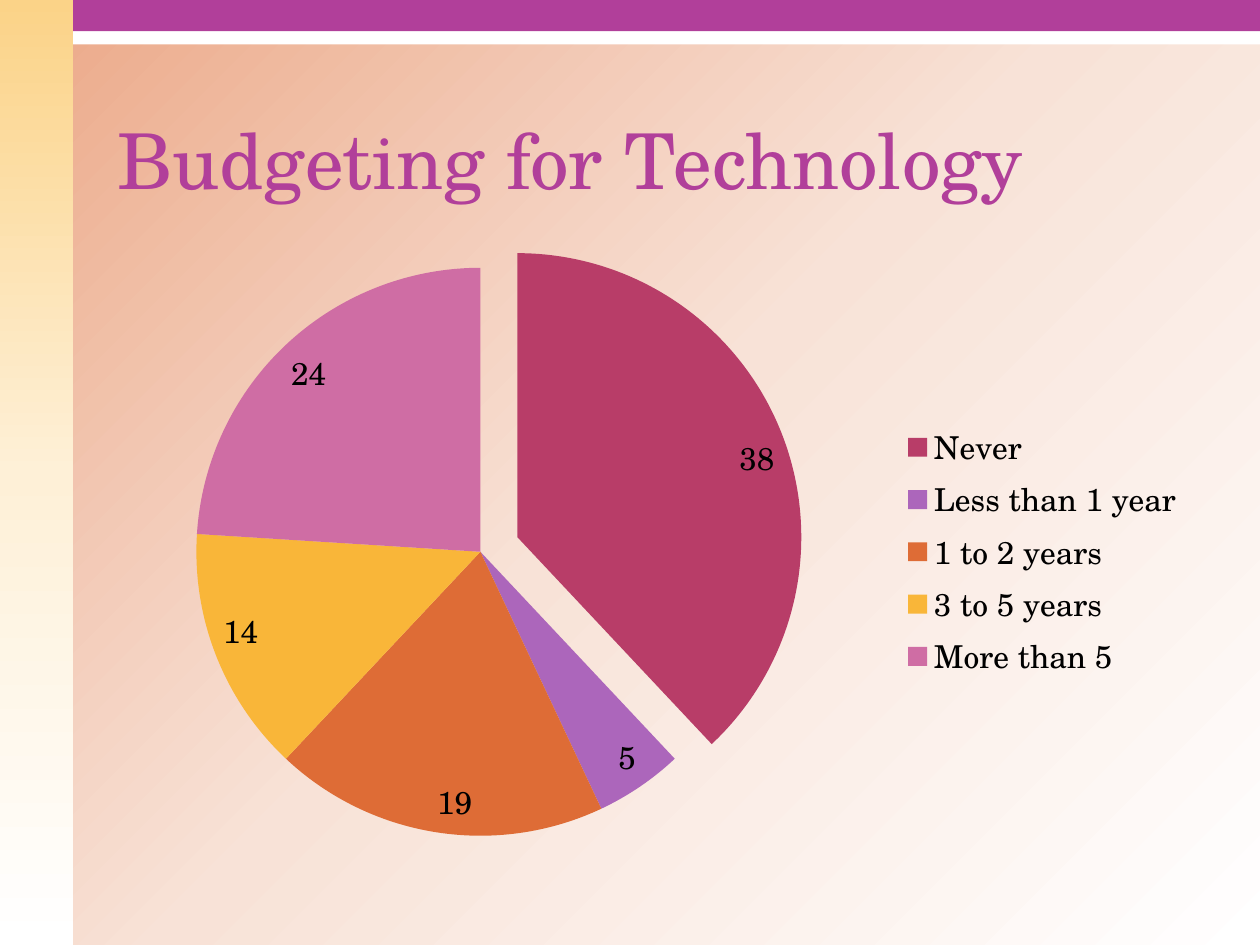
"""Build a slide with an exploded pie chart of technology budgeting frequency."""
import copy
from dataclasses import dataclass

import pptx
import pptx.chart.data
import pptx.dml.color
import pptx.dml.fill
import pptx.enum.chart
import pptx.enum.shapes
import pptx.enum.text
import pptx.oxml.ns
import pptx.slide
import pptx.util

FONT = "TeX Gyre Schola"
WIDTH, HEIGHT = pptx.util.Inches(10), pptx.util.Inches(7.5)
SIDE, BAND, STRIPE = 0.058, 0.047, 0.033
COLORS = {
    "black": "000000", "white": "FFFFFF", "magenta": "B13F9A",
    "peach": "EBA786", "pale_peach": "F8E2D7",
    "gold": "FBD388", "pale_gold": "FEF0D7",
    "never": "B83D68", "under_1": "AC66BB", "1_to_2": "DE6C36",
    "3_to_5": "F9B639", "over_5": "CF6DA4",
}


@dataclass
class Bar:
    x: float
    y: float
    w: float
    h: float
    colors: tuple[str, ...]


@dataclass
class Slice:
    label: str
    value: int
    color: str


BARS = [
    Bar(0, 0, 1, BAND, ("white",)),
    Bar(0, 0, SIDE, 1, ("gold", "pale_gold", "white")),
    Bar(SIDE, 0, 1 - SIDE, STRIPE, ("magenta",)),
]
SLICES = [
    Slice("Never", 38, "never"),
    Slice("Less than 1 year", 5, "under_1"),
    Slice("1 to 2 years", 19, "1_to_2"),
    Slice("3 to 5 years", 14, "3_to_5"),
    Slice("More than 5", 24, "over_5"),
]


def rgb(name: str) -> pptx.dml.color.RGBColor:
    return pptx.dml.color.RGBColor.from_string(COLORS[name])


def set_gradient(fill: pptx.dml.fill.FillFormat, element, colors: tuple[str, ...], angle: int) -> None:
    fill.gradient()
    fill.gradient_angle = 360 - angle
    stops = element.find(".//" + pptx.oxml.ns.qn("a:gsLst"))
    stops.insert(1, copy.deepcopy(stops[0]))
    for i, (stop, color) in enumerate(zip(fill.gradient_stops, colors)):
        stop.position = i / (len(colors) - 1)
        stop.color.rgb = rgb(color)


def set_font(font, size: int, color: str) -> None:
    font.name = FONT
    font.size = pptx.util.Pt(size)
    font.color.rgb = rgb(color)


def place(s, x: float, y: float, w: float, h: float) -> None:
    s.left, s.top = round(x * WIDTH), round(y * HEIGHT)
    s.width, s.height = round(w * WIDTH), round(h * HEIGHT)


def add_bar(slide: pptx.slide.Slide, bar: Bar) -> None:
    s = slide.shapes.add_shape(pptx.enum.shapes.MSO_SHAPE.RECTANGLE, 0, 0, 0, 0)
    place(s, bar.x, bar.y, bar.w, bar.h)
    s.shadow.inherit = False
    s.line.fill.background()
    if len(bar.colors) > 1:
        set_gradient(s.fill, s.element, bar.colors, 90)
    else:
        s.fill.solid()
        s.fill.fore_color.rgb = rgb(bar.colors[0])


def add_pie(slide: pptx.slide.Slide, slices: list[Slice]) -> None:
    data = pptx.chart.data.CategoryChartData()
    data.categories = [item.label for item in slices]
    data.add_series("Series 1", [item.value for item in slices])
    frame = slide.shapes.add_chart(pptx.enum.chart.XL_CHART_TYPE.PIE, 0, 0, WIDTH, HEIGHT, data)
    place(frame, 0.05, 0.223, 0.9, 0.722)
    chart = frame.chart
    set_font(chart.font, 18, "black")
    chart.has_title = False
    chart.has_legend = True
    chart.legend.position = pptx.enum.chart.XL_LEGEND_POSITION.RIGHT
    chart.legend.include_in_layout = False
    plot = chart.plots[0]
    plot.vary_by_categories = True
    plot.has_data_labels = True
    labels = plot.data_labels
    labels.show_value = True
    labels.show_percentage = False
    labels.position = pptx.enum.chart.XL_LABEL_POSITION.INSIDE_END
    set_font(labels.font, 18, "black")
    for i, item in enumerate(slices):
        fill = plot.series[0].points[i].format.fill
        fill.solid()
        fill.fore_color.rgb = rgb(item.color)
    sp_pr = chart.element.find(".//" + pptx.oxml.ns.qn("c:dPt") + "/" + pptx.oxml.ns.qn("c:spPr"))
    sp_pr.addprevious(sp_pr.makeelement(pptx.oxml.ns.qn("c:explosion"), {"val": "14"}))


def set_title(slide: pptx.slide.Slide, text: str) -> None:
    s = slide.shapes.title
    place(s, 0.083, 0.056, 0.875, 0.167)
    tf = s.text_frame
    tf.text = text
    tf.word_wrap = True
    tf.vertical_anchor = pptx.enum.text.MSO_ANCHOR.BOTTOM
    p = tf.paragraphs[0]
    p.alignment = pptx.enum.text.PP_ALIGN.LEFT
    set_font(p.font, 44, "magenta")


def main() -> None:
    prs = pptx.Presentation()
    prs.slide_width, prs.slide_height = WIDTH, HEIGHT
    slide = prs.slides.add_slide(prs.slide_layouts[5])
    set_gradient(slide.background.fill, slide.element, ("peach", "pale_peach", "white"), 45)
    for bar in BARS:
        add_bar(slide, bar)
    add_pie(slide, SLICES)
    set_title(slide, "Budgeting for Technology")
    prs.save("out.pptx")


if __name__ == "__main__":
    main()
